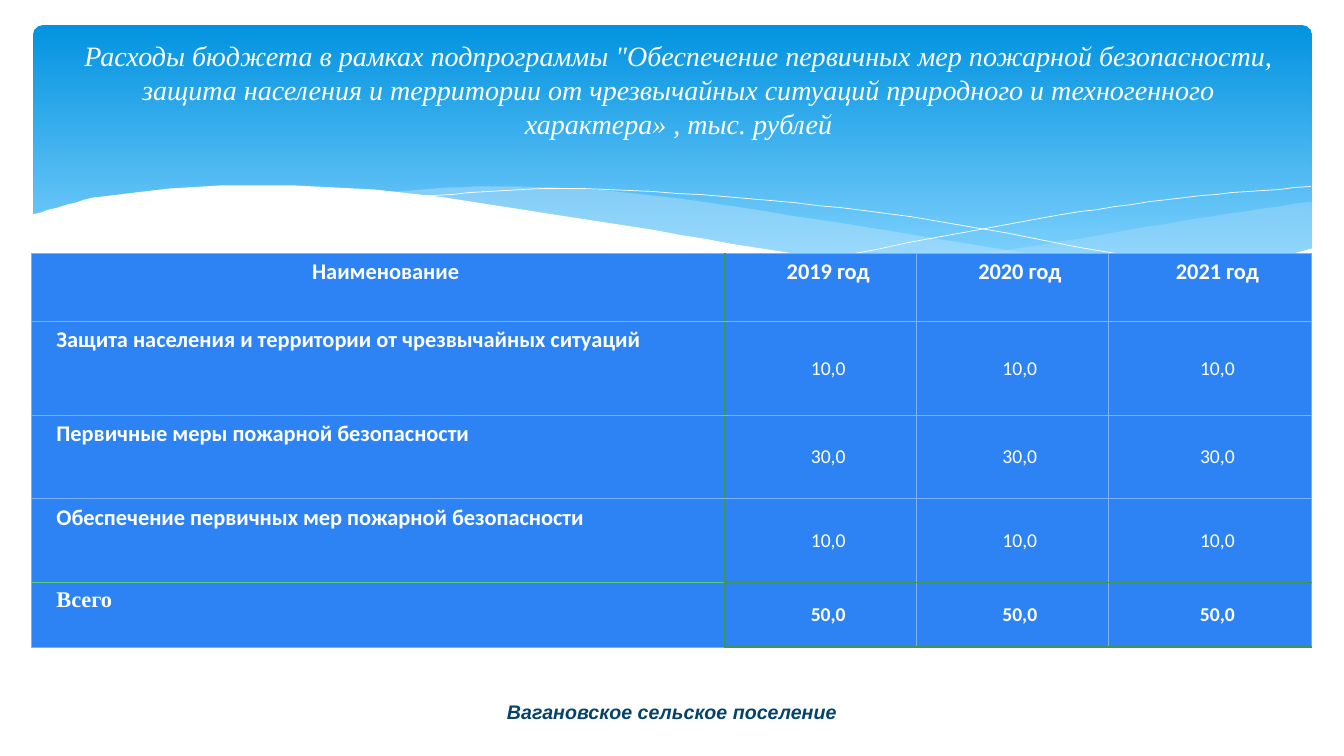
from lxml import etree
from pptx import Presentation
from pptx import util as u
from pptx.dml.color import RGBColor
from pptx.enum import shapes, text
from pptx.oxml import ns

TITLE = (
    'Расходы бюджета в рамках подпрограммы "Обеспечение первичных мер пожарной '
    "безопасности, защита населения и территории от чрезвычайных ситуаций "
    "природного и техногенного характера» , тыс. рублей"
)
SETTLEMENT = "Вагановское сельское поселение"
BUDGET = [
    ("Наименование", "2019 год", "2020 год", "2021 год"),
    ("Защита населения и территории от чрезвычайных ситуаций", "10,0", "10,0", "10,0"),
    ("Первичные меры пожарной безопасности", "30,0", "30,0", "30,0"),
    ("Обеспечение первичных мер пожарной безопасности", "10,0", "10,0", "10,0"),
    ("Всего", "50,0", "50,0", "50,0"),
]
COLUMN_WIDTHS = [6.88, 1.9, 1.9, 2.02]
ROW_HEIGHTS = [0.68, 0.93, 0.83, 0.83, 0.64]
TABLE_LEFT, TABLE_TOP = 0.31, 2.51

TITLE_BOX = (0.62, 0.27, 12.22, 1.23)
SETTLEMENT_BOX = (4.92, 6.89, 3.49, 0.34)
BANNER_BOX = (0.33, 0.25, 12.68, 2.7)
BANNER_SHADES = [(0, "0293E0"), (0.9, "83D3FE")]

WHITE, BLUE, NAVY, MIST = "FFFFFF", "2D83F4", "06436B", "C6E7FC"
THIN, GREEN, DARK = ("7DB1F8", 0.75), ("5BD078", 0.75), ("3D9653", 1.25)

STEPS_PER_BEND = 8
BANDS = [
    {
        "shade": MIST, "opacity": 29,
        "crest": [(8.82, 2.65), (10.38, 2.42), (11.68, 2.2), (13.01, 2)],
        "trough": [(8.82, 2.65), (10.41, 2.77), (11.74, 2.73), (13.01, 2.47)],
    },
    {
        "shade": MIST, "opacity": 40,
        "crest": [(3.82, 1.91), (4.82, 1.85), (6.19, 1.91), (8.39, 2.22),
                  (10.34, 2.54), (11.9, 2.73)],
        "trough": [(3.82, 1.91), (5.99, 2.22), (8.02, 2.55), (9.98, 2.76),
                   (11.04, 2.78), (11.9, 2.73)],
    },
]
FOREGROUND = {
    "shade": WHITE, "opacity": 100,
    "crest": [(0.31, 2.13), (1.01, 1.95), (2.35, 1.84), (3.9, 1.9), (5.96, 2.2),
              (8.04, 2.54), (9.44, 2.7), (10.78, 2.77), (12.13, 2.67), (13.03, 2.46)],
    "trough": [(0.31, 3.29), (13.03, 3.29)],
}
FALLING_LINE = [(4.12, 1.95), (5.55, 1.87), (7.42, 1.97), (9.27, 2.19), (12.1, 2.72)]
RISING_LINE = [(8.18, 2.57), (10.35, 2.16), (11.75, 1.96), (13, 1.85)]


def color(value):
    return RGBColor.from_string(value)


def inches(lengths):
    return [u.Inches(length) for length in lengths]


def slope(start, end):
    return (end[1] - start[1]) / (end[0] - start[0])


def smooth_curve(knots):
    last = len(knots) - 1
    slopes = [
        slope(knots[max(index - 1, 0)], knots[min(index + 1, last)])
        for index in range(len(knots))
    ]
    points = [knots[0]]
    for index in range(last):
        (left, start), (right, end) = knots[index], knots[index + 1]
        width = right - left
        for step in range(1, STEPS_PER_BEND + 1):
            t = step / STEPS_PER_BEND
            ease = t * t * (3 - 2 * t)
            leaving = t * (1 - t) ** 2 * width * slopes[index]
            arriving = t * t * (t - 1) * width * slopes[index + 1]
            height = start + (end - start) * ease + leaving + arriving
            points.append((left + width * t, height))
    return points


def add_outline(slide, points, closed):
    hundredths = [(round(x * 100), round(y * 100)) for x, y in points]
    builder = slide.shapes.build_freeform(*hundredths[0], scale=u.Inches(0.01))
    builder.add_line_segments(hundredths[1:], close=closed)
    outline = builder.convert_to_shape()
    outline.shadow.inherit = False
    return outline


def add_band(slide, shade, opacity, crest, trough):
    border = smooth_curve(crest) + smooth_curve(trough)[::-1]
    band = add_outline(slide, border, True)
    band.line.fill.background()
    band.fill.solid()
    band.fill.fore_color.rgb = color(shade)
    if opacity < 100:
        tint = band.element.spPr.find(".//" + ns.qn("a:srgbClr"))
        etree.SubElement(tint, ns.qn("a:alpha"), val=str(opacity * 1000))


def add_curve(slide, knots):
    curve = add_outline(slide, smooth_curve(knots), False)
    curve.fill.background()
    curve.line.color.rgb = color(WHITE)
    curve.line.width = u.Pt(0.5)


def add_banner(slide):
    banner = slide.shapes.add_shape(
        shapes.MSO_SHAPE.ROUNDED_RECTANGLE, *inches(BANNER_BOX)
    )
    banner.adjustments[0] = 0.034
    banner.shadow.inherit = False
    banner.line.fill.background()
    banner.fill.gradient()
    banner.fill.gradient_angle = 270
    for stop, (position, shade) in zip(banner.fill.gradient_stops, BANNER_SHADES):
        stop.position = position
        stop.color.rgb = color(shade)


def add_waves(slide):
    for band in BANDS:
        add_band(slide, **band)
    for knots in (FALLING_LINE, RISING_LINE):
        add_curve(slide, knots)
    add_band(slide, **FOREGROUND)


def write(frame, words, size, font, ink, bold=False, italic=False, centred=True):
    paragraph = frame.paragraphs[0]
    paragraph.alignment = text.PP_ALIGN.CENTER if centred else text.PP_ALIGN.LEFT
    run = paragraph.add_run()
    run.text = words
    run.font.size = u.Pt(size)
    run.font.name = font
    run.font.bold = bold
    run.font.italic = italic
    run.font.color.rgb = color(ink)
    return paragraph


def add_label(slide, box, wrap):
    frame = slide.shapes.add_textbox(*inches(box)).text_frame
    frame.word_wrap = wrap
    frame.vertical_anchor = text.MSO_ANCHOR.MIDDLE
    return frame


def horizontal_edge(level, column):
    if level == len(BUDGET) - 1:
        return DARK if column else GREEN
    if level == len(BUDGET):
        return DARK if column else THIN
    return THIN


def vertical_edge(position):
    return {1: DARK, len(COLUMN_WIDTHS): GREEN}.get(position, THIN)


def set_borders(cell, row, column):
    edges = {
        "L": vertical_edge(column),
        "R": vertical_edge(column + 1),
        "T": horizontal_edge(row, column),
        "B": horizontal_edge(row + 1, column),
    }
    properties = cell._tc.get_or_add_tcPr()
    for side, (shade, points) in edges.items():
        line = etree.SubElement(properties, ns.qn("a:ln" + side), w=str(u.Pt(points)))
        fill = etree.SubElement(line, ns.qn("a:solidFill"))
        etree.SubElement(fill, ns.qn("a:srgbClr"), val=shade)


def fill_cell(cell, row, column, words):
    heading = row == 0 or column == 0
    total = row == len(BUDGET) - 1
    set_borders(cell, row, column)
    cell.fill.solid()
    cell.fill.fore_color.rgb = color(BLUE)
    if not heading:
        cell.vertical_anchor = text.MSO_ANCHOR.MIDDLE
    paragraph = write(
        cell.text_frame, words, 16 if heading else 14,
        "Times New Roman" if total and heading else "Calibri",
        WHITE, bold=heading or total, centred=row == 0 or column > 0,
    )
    paragraph._p.get_or_add_pPr().set("marL", str(u.Inches(0.15)))


def add_budget_table(slide):
    box = (TABLE_LEFT, TABLE_TOP, sum(COLUMN_WIDTHS), sum(ROW_HEIGHTS))
    table = slide.shapes.add_table(len(BUDGET), len(COLUMN_WIDTHS), *inches(box)).table
    table.first_row = table.horz_banding = False
    for column, width in zip(table.columns, inches(COLUMN_WIDTHS)):
        column.width = width
    for row, height in zip(table.rows, inches(ROW_HEIGHTS)):
        row.height = height
    for row, entries in enumerate(BUDGET):
        for column, words in enumerate(entries):
            fill_cell(table.cell(row, column), row, column, words)


presentation = Presentation()
presentation.slide_width, presentation.slide_height = inches((13.33, 7.5))
slide = presentation.slides.add_slide(presentation.slide_layouts[6])
add_banner(slide)
add_waves(slide)
write(add_label(slide, TITLE_BOX, True), TITLE, 20, "Times New Roman", WHITE, italic=True)
settlement = add_label(slide, SETTLEMENT_BOX, False)
write(settlement, SETTLEMENT, 14, "Arial", NAVY, bold=True, italic=True)
add_budget_table(slide)
presentation.save("out.pptx")
